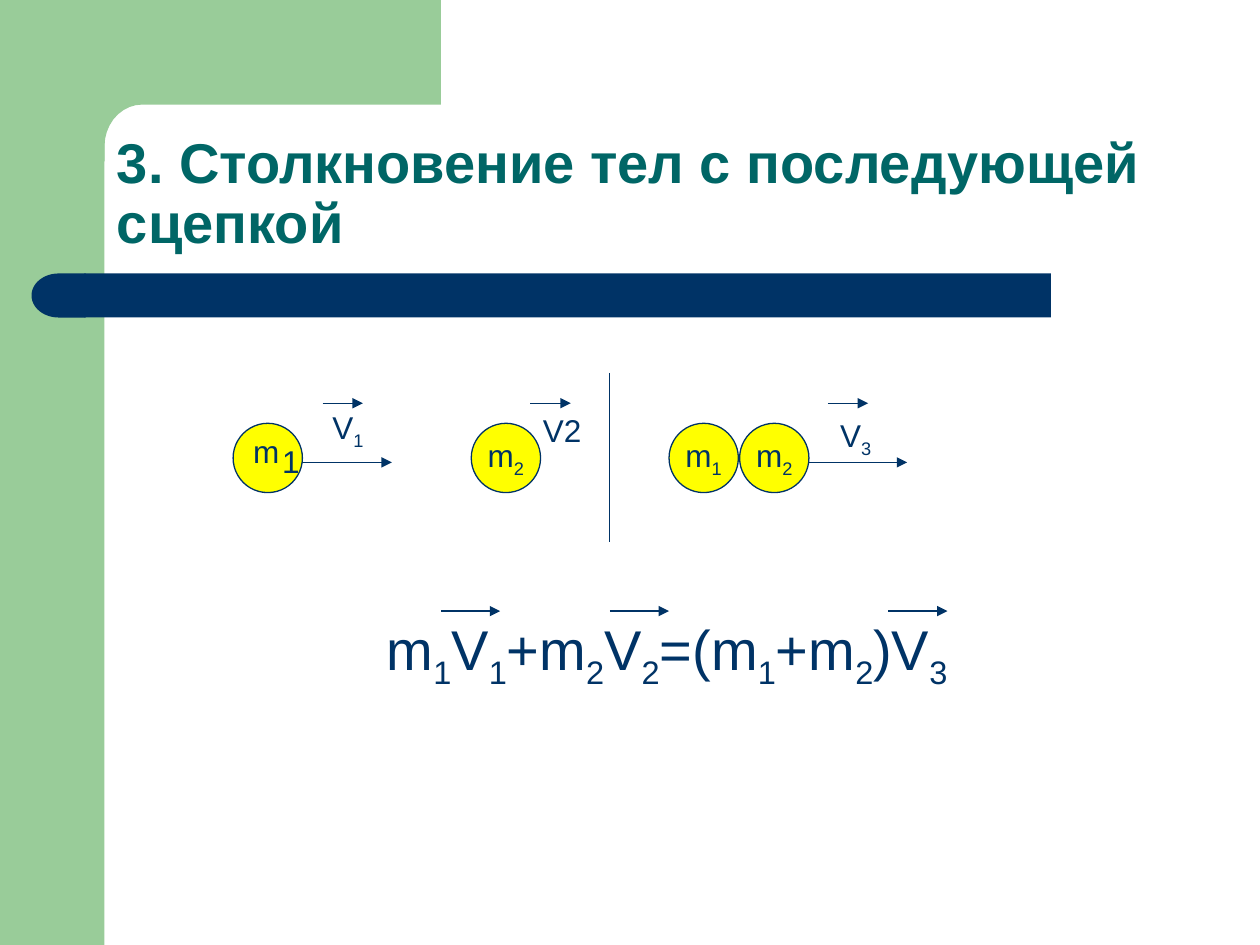
import math

from lxml import etree
from pptx import Presentation
from pptx import util as u
from pptx.dml.color import RGBColor
from pptx.enum import shapes, text
from pptx.oxml.ns import qn

GREEN, NAVY, TEAL, YELLOW = "99CC99", "003366", "006666", "FFFF00"


def color(hex_string):
    return RGBColor.from_string(hex_string)


class Sketch:
    font = "Arial"
    line_width = u.Pt(0.75)

    def __init__(self, slide):
        self.slide = slide

    def paint(self, shape, fill, line=None):
        shape.shadow.inherit = False
        shape.fill.solid()
        shape.fill.fore_color.rgb = color(fill)
        if line:
            shape.line.color.rgb = color(line)
            shape.line.width = self.line_width
        else:
            shape.line.fill.background()

    def shape(self, kind, left, top, width, height, fill, line=None):
        lengths = map(u.Inches, (left, top, width, height))
        shape = self.slide.shapes.add_shape(kind, *lengths)
        self.paint(shape, fill, line)
        return shape

    def outline(self, points, fill):
        corners = [(u.Inches(x), u.Inches(y)) for x, y in points]
        builder = self.slide.shapes.build_freeform(*corners[0])
        builder.add_line_segments(corners[1:], close=True)
        self.paint(builder.convert_to_shape(), fill)

    def add_runs(self, paragraph, formula, size, ink=NAVY, bold=False):
        """Add runs; an underscore makes the next character a subscript."""
        first, *rest = formula.split("_")
        parts = [(first, False)]
        for piece in rest:
            parts += [(piece[0], True), (piece[1:], False)]
        for words, subscript in parts:
            if not words:
                continue
            run = paragraph.add_run()
            run.text = words
            run.font.name = self.font
            run.font.size = u.Pt(size)
            run.font.bold = bold
            run.font.color.rgb = color(ink)
            if subscript:
                run._r.get_or_add_rPr().set("baseline", "-25000")

    def label(self, left, top, width, height, formula, size=18):
        box = self.slide.shapes.add_textbox(*map(u.Inches, (left, top, width, height)))
        box.text_frame.word_wrap = False
        self.add_runs(box.text_frame.paragraphs[0], formula, size)

    def title(self, left, top, width, height, words):
        box = self.slide.shapes.add_textbox(*map(u.Inches, (left, top, width, height)))
        frame = box.text_frame
        frame.word_wrap = True
        frame.vertical_anchor = text.MSO_ANCHOR.BOTTOM
        frame.paragraphs[0].line_spacing = 0.9
        self.add_runs(frame.paragraphs[0], words, 32, TEAL, bold=True)

    def ball(self, left, formula=""):
        shape = self.shape(shapes.MSO_SHAPE.OVAL, left, 3.36, 0.55, 0.55, YELLOW, NAVY)
        if formula:
            frame = shape.text_frame
            frame.word_wrap = False
            frame.vertical_anchor = text.MSO_ANCHOR.MIDDLE
            frame.paragraphs[0].alignment = text.PP_ALIGN.CENTER
            self.add_runs(frame.paragraphs[0], formula, 18)

    def line(self, x1, y1, x2, y2):
        connector = self.slide.shapes.add_connector(
            shapes.MSO_CONNECTOR.STRAIGHT, *map(u.Inches, (x1, y1, x2, y2)))
        connector.line.color.rgb = color(NAVY)
        connector.line.width = self.line_width
        etree.SubElement(connector._element.spPr, qn("a:effectLst"))
        return connector

    def arrow(self, left, y, length):
        connector = self.line(left, y, left + length, y)
        outline = connector._element.spPr.find(qn("a:ln"))
        etree.SubElement(outline, qn("a:tailEnd"), type="triangle")


def draw_background(sketch):
    kinds = shapes.MSO_SHAPE
    sketch.shape(kinds.RECTANGLE, 0, 0, 0.83, 7.5, GREEN)
    angles = [math.radians(degrees) for degrees in range(0, 91, 10)]
    curve = [(1.13 - 0.3 * math.sin(a), 1.16 - 0.33 * math.cos(a)) for a in angles]
    sketch.outline([(3.5, 0), (3.5, 0.83), *curve, (0.83, 1.28), (0.5, 1.28), (0.5, 0)], GREEN)
    sketch.shape(kinds.RECTANGLE, 0.67, 2.17, 7.67, 0.35, NAVY)
    cap = sketch.shape(kinds.FLOWCHART_DELAY, 0.25, 2.17, 0.43, 0.35, NAVY)
    cap.rotation = 180


def draw_collision(sketch):
    for left, mass in ((1.85, ""), (3.74, "m_2"), (5.31, "m_1"), (5.87, "m_2")):
        sketch.ball(left, mass)
    sketch.label(1.91, 3.38, 0.41, 0.4, "m")
    sketch.label(2.14, 3.46, 0.34, 0.4, "1")
    sketch.line(4.84, 2.96, 4.84, 4.3)
    sketch.arrow(2.4, 3.67, 0.71)
    sketch.arrow(6.42, 3.67, 0.78)
    velocities = ((2.56, 2.54, 3.19, 0.46, "V_1"),
                  (4.21, 4.21, 3.21, 0.51, "V2"),
                  (6.57, 6.57, 3.25, 0.46, "V_3"))
    for arrow_left, left, top, width, velocity in velocities:
        sketch.label(left, top, width, 0.4, velocity)
        sketch.arrow(arrow_left, 3.2, 0.32)


def draw_equation(sketch):
    sketch.label(2.97, 4.83, 4.78, 0.63, "m_1V_1+m_2V_2=(m_1+m_2)V_3", 32)
    for left in (3.5, 4.84, 7.05):
        sketch.arrow(left, 4.85, 0.47)


def main():
    presentation = Presentation()
    presentation.slide_width = u.Inches(10)
    presentation.slide_height = u.Inches(7.5)
    sketch = Sketch(presentation.slides.add_slide(presentation.slide_layouts[6]))
    draw_background(sketch)
    sketch.title(0.83, 0.83, 8.67, 1.25, "3. Столкновение тел с последующей сцепкой")
    draw_collision(sketch)
    draw_equation(sketch)
    presentation.save("out.pptx")


if __name__ == "__main__":
    main()
